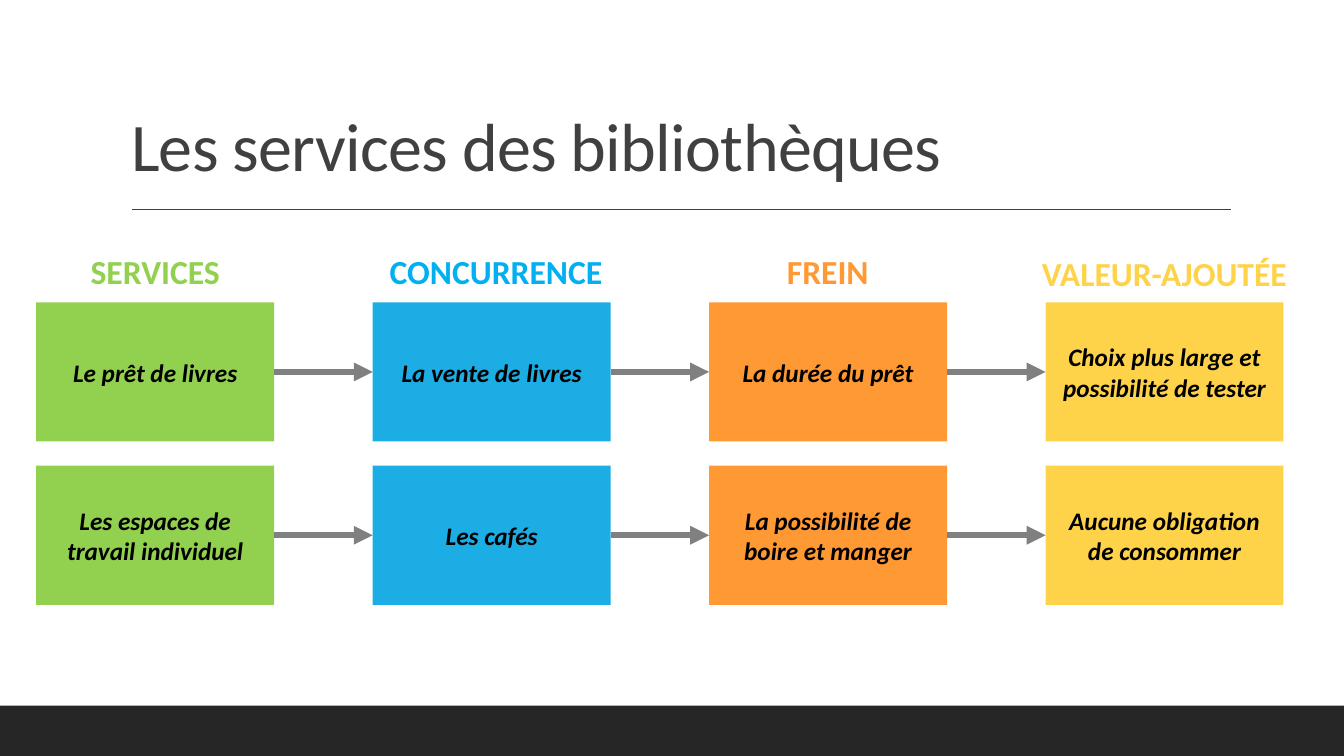
from lxml.etree import SubElement
from pptx import Presentation
from pptx.dml.color import RGBColor
from pptx.enum.shapes import MSO_CONNECTOR, MSO_SHAPE
from pptx.enum.text import MSO_ANCHOR, MSO_AUTO_SIZE, PP_ALIGN
from pptx.oxml.ns import qn
from pptx.util import Inches, Pt


def rgb(color):
    return RGBColor.from_string(color)


class ServicesSlide:
    FONT = "Calibri"
    INK = "404040"
    ARROW = "808080"

    def __init__(self, deck):
        self.slide = deck.slides.add_slide(deck.slide_layouts[5])
        self.shapes = self.slide.shapes

    def put_text(self, frame, text, size, color, align, bold=False, italic=False):
        paragraph = frame.paragraphs[0]
        paragraph.alignment = align
        run = paragraph.add_run()
        run.text = text
        font = run.font
        font.name, font.size = self.FONT, Pt(size)
        font.bold, font.italic = bold, italic
        font.color.rgb = rgb(color)
        return paragraph, run

    def title(self, text, left, top, width, height):
        title = self.shapes.title
        title.left, title.top = Inches(left), Inches(top)
        title.width, title.height = Inches(width), Inches(height)
        frame = title.text_frame
        frame.auto_size = MSO_AUTO_SIZE.NONE
        frame.vertical_anchor = MSO_ANCHOR.BOTTOM
        paragraph, run = self.put_text(frame, text, 48.6, self.INK, PP_ALIGN.LEFT)
        paragraph.line_spacing = 0.9
        run._r.get_or_add_rPr().set("spc", "-50")

    def box(self, left, top, width, height, fill, text=None):
        box = self.shapes.add_shape(MSO_SHAPE.RECTANGLE, Inches(left), Inches(top),
                                    Inches(width), Inches(height))
        box.shadow.inherit = False
        box.fill.solid()
        box.fill.fore_color.rgb = rgb(fill)
        box.line.fill.background()
        if text:
            frame = box.text_frame
            frame.word_wrap = True
            frame.vertical_anchor = MSO_ANCHOR.MIDDLE
            self.put_text(frame, text, 18, "000000", PP_ALIGN.CENTER, bold=True, italic=True)
        return box

    def heading(self, text, center, top, width, color):
        heading = self.shapes.add_textbox(Inches(center - width / 2), Inches(top),
                                          Inches(width), Inches(0.5))
        frame = heading.text_frame
        frame.word_wrap = False
        frame.auto_size = MSO_AUTO_SIZE.SHAPE_TO_FIT_TEXT
        self.put_text(frame, text, 24, color, PP_ALIGN.CENTER, bold=True)

    def line(self, x1, y1, x2, y2, color, weight):
        line = self.shapes.add_connector(MSO_CONNECTOR.STRAIGHT, Inches(x1), Inches(y1),
                                         Inches(x2), Inches(y2))
        line.line.color.rgb = rgb(color)
        line.line.width = Pt(weight)
        SubElement(line._element.spPr, qn("a:effectLst"))
        return line

    def arrow(self, source, target):
        arrow = self.line(0, 0, 1, 0, self.ARROW, 4.5)
        arrow.begin_connect(source, 3)
        arrow.end_connect(target, 1)
        SubElement(arrow.get_or_add_ln(), qn("a:tailEnd"), type="triangle")


# Heading, its centre, top, width and colour, box colour, box texts
COLUMNS = [
    ("SERVICES", 1.54, 2.44, 1.82, "92D050", "92D050",
     ["Le prêt de livres", "Les espaces de travail individuel"]),
    ("CONCURRENCE", 4.92, 2.44, 2.77, "00B0F0", "1CADE4",
     ["La vente de livres", "Les cafés"]),
    ("FREIN", 8.21, 2.44, 1.21, "FF9933", "FF9933",
     ["La durée du prêt", "La possibilité de boire et manger"]),
    ("VALEUR-AJOUTÉE", 11.55, 2.46, 3.3, "FFD349", "FFD349",
     ["Choix plus large et possibilité de tester", "Aucune obligation de consommer"]),
]
BOX_LEFT, BOX_TOP, BOX_WIDTH, BOX_HEIGHT = 0.36, 3, 2.36, 1.38
LAST_LEFT, ROW_STEP = 10.37, 1.62
COLUMN_STEP = (LAST_LEFT - BOX_LEFT) / (len(COLUMNS) - 1)


def main():
    deck = Presentation()
    deck.slide_width, deck.slide_height = Inches(13.33), Inches(7.5)
    services = ServicesSlide(deck)

    # Footer band, title and rule
    services.box(0, 7, 13.33, 0.5, "262626")
    services.line(1.31, 2.08, 12.21, 2.08, services.INK, 1)
    services.title("Les services des bibliothèques", 1.2, 0.31, 11, 1.59)

    # Columns, each box linked to the one on its left
    previous = []
    for column, (name, center, top, width, color, fill, texts) in enumerate(COLUMNS):
        services.heading(name, center, top, width, color)
        left = BOX_LEFT + column * COLUMN_STEP
        current = [services.box(left, BOX_TOP + row * ROW_STEP, BOX_WIDTH, BOX_HEIGHT, fill, text)
                   for row, text in enumerate(texts)]
        for source, target in zip(previous, current):
            services.arrow(source, target)
        previous = current

    deck.save("out.pptx")


if __name__ == "__main__":
    main()
